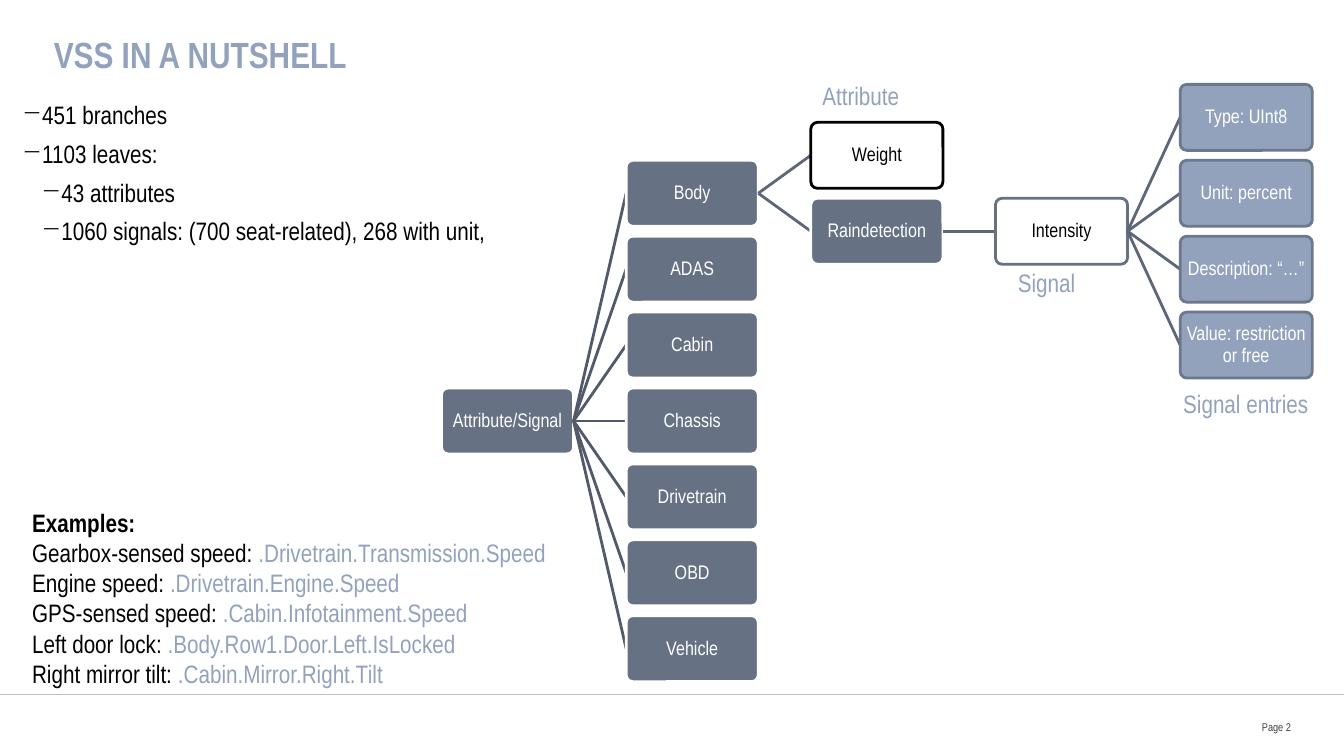
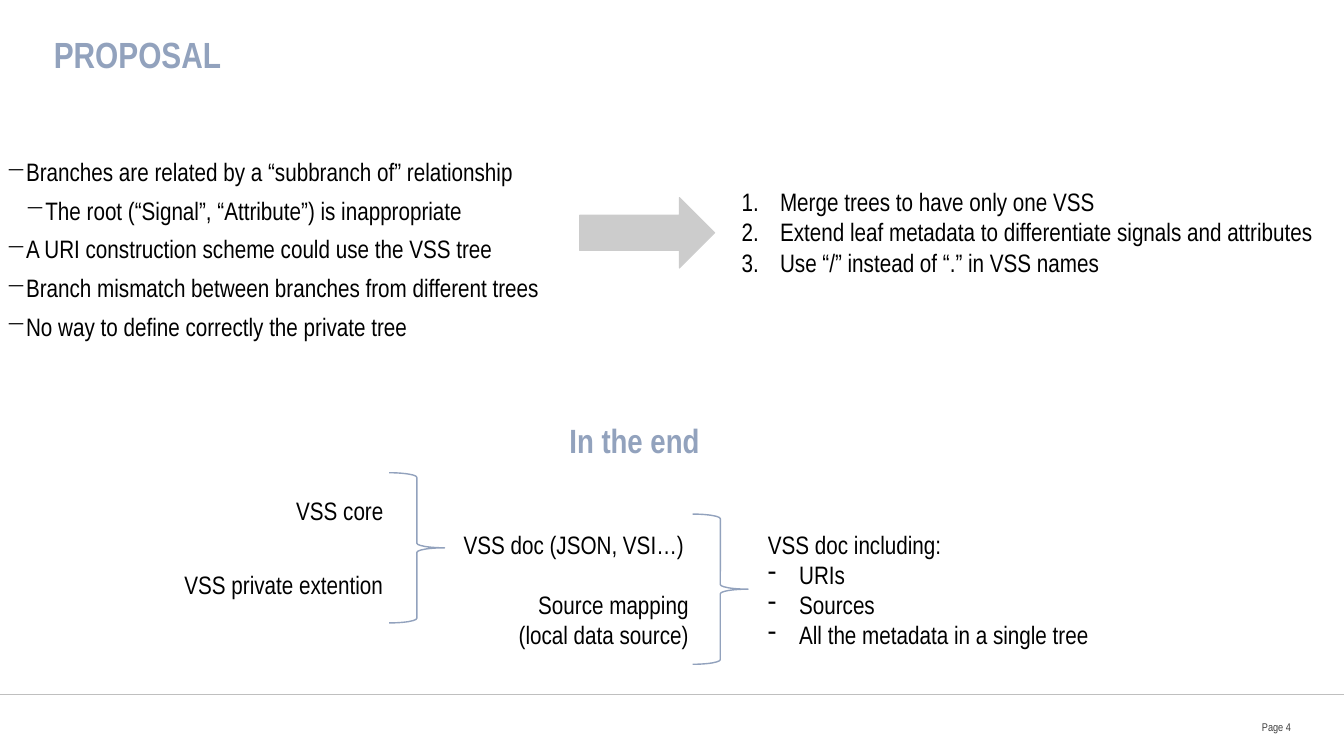
import pptx
import pptx.dml.color
import pptx.enum.shapes
import pptx.enum.text
import pptx.oxml.ns
import pptx.util
import lxml.etree

WIDE, HIGH = 13.333, 7.5
FONT = "Arial Narrow"
INK, WHITE, BLUE, SLATE = "000000", "FFFFFF", "92A2BD", "667184"
EDGE, ROOT, LINK = "6C788C", "525A6A", "5D6778"
RULE, GREY, PAGE = "BFBFBF", "CCCCCC", "404040"

# Tree grid, in percent of the slide
LEFT, TOP = 32.85, 21.2
COL, ROW = 13.74, 10.04
NODE = (9.83, 8.73)

SHAPE = pptx.enum.shapes.MSO_SHAPE
ALIGN = pptx.enum.text.PP_ALIGN
ANCHOR = pptx.enum.text.MSO_ANCHOR

# Node styles: fill, line, text
BRANCH = (SLATE, WHITE, WHITE)
ATTRIB = (WHITE, INK, INK)
SIGNAL = (WHITE, SLATE, INK)
ENTRY = (BLUE, EDGE, WHITE)

# Each node: text, column, row, style, children
TREE = ("Attribute/Signal", 0, 3, BRANCH, [
    ("Body", 1, 0, BRANCH, [
        ("Weight", 2, -0.5, ATTRIB, []),
        ("Raindetection", 2, 0.5, BRANCH, [
            ("Intensity", 3, 0.5, SIGNAL, [
                (text, 4, row, ENTRY, []) for row, text in enumerate(
                    ["Type: UInt8", "Unit: percent", "Description: “…”",
                     "Value: restriction or free"], -1)])])]),
    *[(text, 1, row, BRANCH, []) for row, text in enumerate(
        ["ADAS", "Cabin", "Chassis", "Drivetrain", "OBD", "Vehicle"], 1)]])

PATHS = [
    ("Gearbox-sensed speed: ", ".Drivetrain.Transmission.Speed"),
    ("Engine speed: ", ".Drivetrain.Engine.Speed"),
    ("GPS-sensed speed: ", ".Cabin.Infotainment.Speed"),
    ("Left door lock:", " .Body.Row1.Door.Left.IsLocked"),
    ("Right mirror tilt: ", ".Cabin.Mirror.Right.Tilt"),
]


def color(code):
    return pptx.dml.color.RGBColor.from_string(code)


def place(*sizes):
    """Turn x, y pairs in percent of the slide into lengths."""
    return [pptx.util.Inches(size / 100 * (HIGH if i % 2 else WIDE))
            for i, size in enumerate(sizes)]


def write(frame, text, size=18, ink=INK, bold=False, align=ALIGN.LEFT,
          line=None, after=0, mark=None, left=0, hang=0):
    """Add a paragraph; text is a string or a list of (string, colour)."""
    para = frame.paragraphs[0]
    if para.runs:
        para = frame.add_paragraph()
    para.alignment, para.line_spacing = align, line
    para.space_before, para.space_after = 0, pptx.util.Pt(after)
    for words, tint in [(text, ink)] if isinstance(text, str) else text:
        run = para.add_run()
        run.text = words
        font = run.font
        font.name, font.size, font.bold = FONT, pptx.util.Pt(size), bold
        font.color.rgb = color(tint)
    if mark:
        props = para._p.get_or_add_pPr()
        props.set("marL", str(pptx.util.Inches(left)))
        props.set("indent", str(-pptx.util.Inches(hang)))
        kind, key = (("a:buAutoNum", "type") if mark == "arabicPeriod"
                     else ("a:buChar", "char"))
        lxml.etree.SubElement(props, pptx.oxml.ns.qn(kind)).set(key, mark)


def inset(frame, gap=0):
    frame.margin_left = frame.margin_right = pptx.util.Inches(gap)
    frame.margin_top = frame.margin_bottom = pptx.util.Inches(gap)


def box(slide, area, *texts, wrap=False, **form):
    """Add a text box with one paragraph per text."""
    frame = slide.shapes.add_textbox(*place(*area)).text_frame
    frame.word_wrap = wrap
    for text in texts:
        write(frame, text, **form)
    return frame


def points(slide, area, items):
    """Add a dashed list of (level, text) items."""
    frame = box(slide, area, wrap=True)
    inset(frame)
    for level, text in items:
        write(frame, text, after=6, mark="−",
              left=0.19 + 0.2 * level, hang=0.2 if level else 0.19)


def shape(slide, kind, area, fill, edge, width):
    item = slide.shapes.add_shape(kind, *place(*area))
    item.shadow.inherit = False
    if fill:
        item.fill.solid()
        item.fill.fore_color.rgb = color(fill)
    else:
        item.fill.background()
    item.line.color.rgb = color(edge)
    item.line.width = pptx.util.Pt(width)
    return item


def brace(slide, x, y):
    shape(slide, SHAPE.RIGHT_BRACE, (x, y, 4.13, 19.87), None, BLUE, 1)


def line(slide, ends, ink, width):
    item = slide.shapes.add_connector(
        pptx.enum.shapes.MSO_CONNECTOR.STRAIGHT, *place(*ends))
    item.line.color.rgb = color(ink)
    item.line.width = pptx.util.Pt(width)
    lxml.etree.SubElement(item._element.spPr, pptx.oxml.ns.qn("a:effectLst"))


def grow(slide, node, start=None, ink=ROOT):
    """Draw a node, the link that leads to it, and all its children."""
    text, col, row, (fill, edge, tint), kids = node
    x, y = LEFT + col * COL, TOP + row * ROW
    wide, high = NODE
    mid = y + high / 2
    if start:
        line(slide, (*start, x, mid), ink, 2)
    item = shape(slide, SHAPE.ROUNDED_RECTANGLE, (x, y, *NODE), fill, edge, 2)
    item.adjustments[0] = 0.1
    frame = item.text_frame
    frame.word_wrap, frame.vertical_anchor = True, ANCHOR.MIDDLE
    inset(frame, 0.01)
    write(frame, text, size=14, ink=tint, align=ALIGN.CENTER, line=0.9)
    for kid in kids:
        grow(slide, kid, (x + wide, mid), LINK if start else ROOT)


def begin(deck, title, page):
    """Add a slide with its title, bottom rule and page number."""
    slide = deck.slides.add_slide(deck.slide_layouts[5])
    line(slide, (0, 91.87, 100, 91.87), RULE, 1)
    head = slide.shapes.title
    head.left, head.top, head.width, head.height = place(4, 5.07, 92.1, 10.27)
    frame = head.text_frame
    frame.vertical_anchor, frame.word_wrap = ANCHOR.TOP, True
    frame.auto_size = pptx.enum.text.MSO_AUTO_SIZE.NONE
    inset(frame)
    write(frame, title, size=26, ink=BLUE, bold=True, line=pptx.util.Pt(27))
    foot = box(slide, (86.85, 93.73, 9.22, 4.8), f"Page {page}", wrap=True,
               size=8, ink=PAGE, align=ALIGN.RIGHT)
    foot.vertical_anchor = ANCHOR.MIDDLE
    inset(foot)
    return slide


def nutshell(deck):
    slide = begin(deck, "VSS IN A NUTSHELL", 2)
    points(slide, (1.65, 13.2, 92.1, 68.67), [
        (0, "451 branches"),
        (0, "1103 leaves:"),
        (1, "43 attributes"),
        (1, "1060 signals: (700 seat-related), 268 with unit,")])
    grow(slide, TREE)
    for x, y, wide, text in [(60.45, 10, 7.8, "Attribute"),
                             (75, 34.67, 5.93, "Signal"),
                             (87.3, 50.67, 11.25, "Signal entries")]:
        box(slide, (x, y, wide, 5.33), text, ink=BLUE)
    frame = box(slide, (1.65, 66.4, 50, 29.6), "Examples:", wrap=True,
                bold=True)
    for name, code in PATHS:
        write(frame, [(name, INK), (code, BLUE)])


def proposal(deck):
    slide = begin(deck, "PROPOSAL", 4)
    points(slide, (0.45, 20.67, 43.35, 23.6), [
        (0, "Branches are related by a “subbranch of” relationship"),
        (1, "The root (“Signal”, “Attribute”) is inappropriate"),
        (0, "A URI construction scheme could use the VSS tree"),
        (0, "Branch mismatch between branches from different trees"),
        (0, "No way to define correctly the private tree")])
    shape(slide, SHAPE.RIGHT_ARROW, (43.13, 26.13, 10.05, 9.33),
          GREY, GREY, 0.75)
    box(slide, (54.45, 24, 45.6, 13.47),
        "Merge trees to have only one VSS",
        "Extend leaf metadata to differentiate signals and attributes",
        "Use “/” instead of “.” in VSS names",
        mark="arabicPeriod", left=0.38, hang=0.38)
    box(slide, (41.63, 54.93, 11.7, 6.67), "In the end",
        size=24, ink=BLUE, bold=True)
    box(slide, (21.3, 64.8, 8.03, 5.33), "VSS core")
    box(slide, (12.98, 74.67, 16.65, 5.33), "VSS private extention")
    brace(slide, 28.95, 62.53)
    box(slide, (33.75, 69.33, 18.3, 5.33), "VSS doc (JSON, VSI…)")
    box(slide, (37.43, 77.33, 14.55, 9.47), "Source mapping",
        "(local data source)", align=ALIGN.RIGHT)
    brace(slide, 51.53, 68)
    frame = box(slide, (56.4, 69.33, 25.88, 17.47), "VSS doc including:")
    for text in ["URIs", "Sources", "All the metadata in a single tree"]:
        write(frame, text, mark="-", left=0.31, hang=0.31)


def main():
    deck = pptx.Presentation()
    deck.slide_width, deck.slide_height = place(100, 100)
    nutshell(deck)
    proposal(deck)
    deck.save("out.pptx")


if __name__ == "__main__":
    main()
